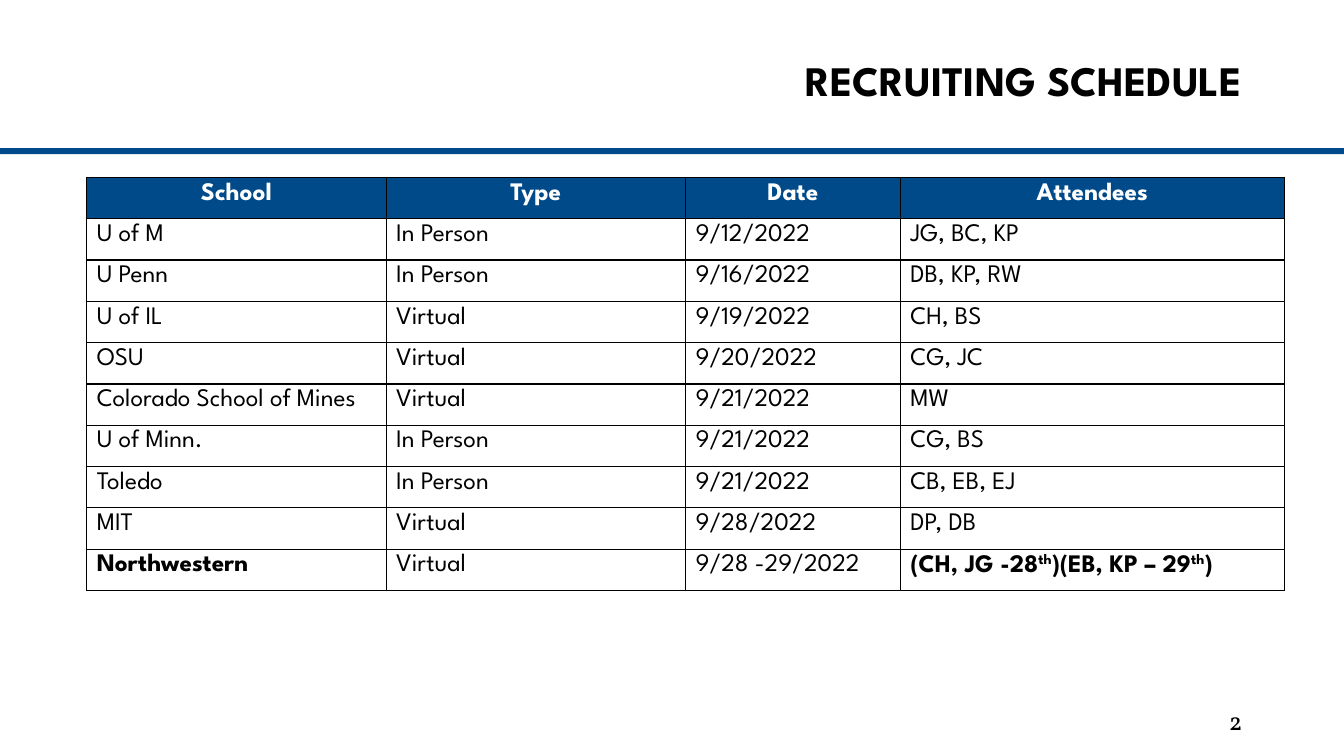
"""Build the recruiting schedule slide."""
from lxml.etree import SubElement
from pptx import Presentation
from pptx.dml.color import RGBColor
from pptx.enum.shapes import MSO_SHAPE as Shape
from pptx.enum.text import MSO_ANCHOR as Anchor, PP_ALIGN as Align
from pptx.oxml.ns import qn
from pptx.util import Inches, Pt


def color(hex_string):
    return RGBColor.from_string(hex_string)


def add_run(paragraph, text, ink="000000", **formats):
    run = paragraph.add_run()
    run.text = text
    for attribute, value in formats.items():
        setattr(run.font, attribute, value)
    run.font.color.rgb = color(ink)
    return run


SPARTAN = "League Spartan"
SCHEDULE = [
    ("School", "Type", "Date", "Attendees"),
    ("U of M", "In Person", "9/12/2022", "JG, BC, KP"),
    ("U Penn", "In Person", "9/16/2022", "DB, KP, RW"),
    ("U of IL", "Virtual", "9/19/2022", "CH, BS"),
    ("OSU", "Virtual", "9/20/2022", "CG, JC"),
    ("Colorado School of Mines", "Virtual", "9/21/2022", "MW"),
    ("U of Minn.", "In Person", "9/21/2022", "CG, BS"),
    ("Toledo", "In Person", "9/21/2022", "CB, EB, EJ"),
    ("MIT", "Virtual", "9/28/2022", "DP, DB"),
    ("Northwestern", "Virtual", "9/28 -29/2022", "(CH, JG -28^th^)(EB, KP – 29^th^)"),
]
COLUMN_WIDTHS = [2.97, 2.97, 2.13, 3.81]
ROW_HEIGHT = 0.41
BOLD_CELLS = {("Northwestern", 0), ("Northwestern", 3)}

prs = Presentation()
prs.slide_width, prs.slide_height = Inches(13.33), Inches(7.5)
slide = prs.slides.add_slide(prs.slide_layouts[5])

rule = slide.shapes.add_shape(Shape.RECTANGLE, 0, Inches(1.47), Inches(13.33), Inches(0.06))
rule.shadow.inherit = False
rule.fill.solid()
rule.fill.fore_color.rgb = color("004A8B")
rule.line.fill.background()

title = slide.shapes.title
title.left, title.top = Inches(1.88), Inches(0.4)
title.width, title.height = Inches(10.54), Inches(0.84)
title.text_frame.vertical_anchor = Anchor.MIDDLE
heading = title.text_frame.paragraphs[0]
heading.alignment = Align.RIGHT
heading.line_spacing = 0.9
add_run(heading, "RECRUITING SCHEDULE", size=Pt(30), name=SPARTAN, bold=True)

schedule = slide.shapes.add_table(
    len(SCHEDULE), len(COLUMN_WIDTHS), Inches(0.86), Inches(1.76),
    Inches(sum(COLUMN_WIDTHS)), Inches(ROW_HEIGHT * len(SCHEDULE)),
).table
schedule.horz_banding = False
for column, width in zip(schedule.columns, COLUMN_WIDTHS):
    column.width = Inches(width)

for row_index, entries in enumerate(SCHEDULE):
    schedule.rows[row_index].height = Inches(ROW_HEIGHT)
    is_header = row_index == 0
    for column_index, entry in enumerate(entries):
        cell = schedule.cell(row_index, column_index)
        properties = cell._tc.get_or_add_tcPr()
        for side in ("a:lnL", "a:lnR", "a:lnT", "a:lnB"):
            border = SubElement(properties, qn(side), w=str(Pt(1)))
            SubElement(SubElement(border, qn("a:solidFill")), qn("a:srgbClr"), val="000000")
        if is_header:
            cell.fill.solid()
            cell.fill.fore_color.rgb = color("004A8A")
        else:
            cell.fill.background()
        paragraph = cell.text_frame.paragraphs[0]
        paragraph.alignment = Align.CENTER if is_header else Align.LEFT
        bold = is_header or (entries[0], column_index) in BOLD_CELLS
        for part_index, part in enumerate(entry.split("^")):
            run = add_run(paragraph, part, "FFFFFF" if is_header else "000000",
                          size=Pt(18), name=SPARTAN, bold=bold)
            if part_index % 2:
                run._r.get_or_add_rPr().set("baseline", "30000")

page_number = slide.shapes.add_textbox(Inches(9.42), Inches(6.95), Inches(3), Inches(0.4))
page_number.text_frame.word_wrap = True
page_paragraph = page_number.text_frame.paragraphs[0]
page_paragraph.alignment = Align.RIGHT
add_run(page_paragraph, "2", size=Pt(18), name="Vollkorn")

prs.save("out.pptx")
